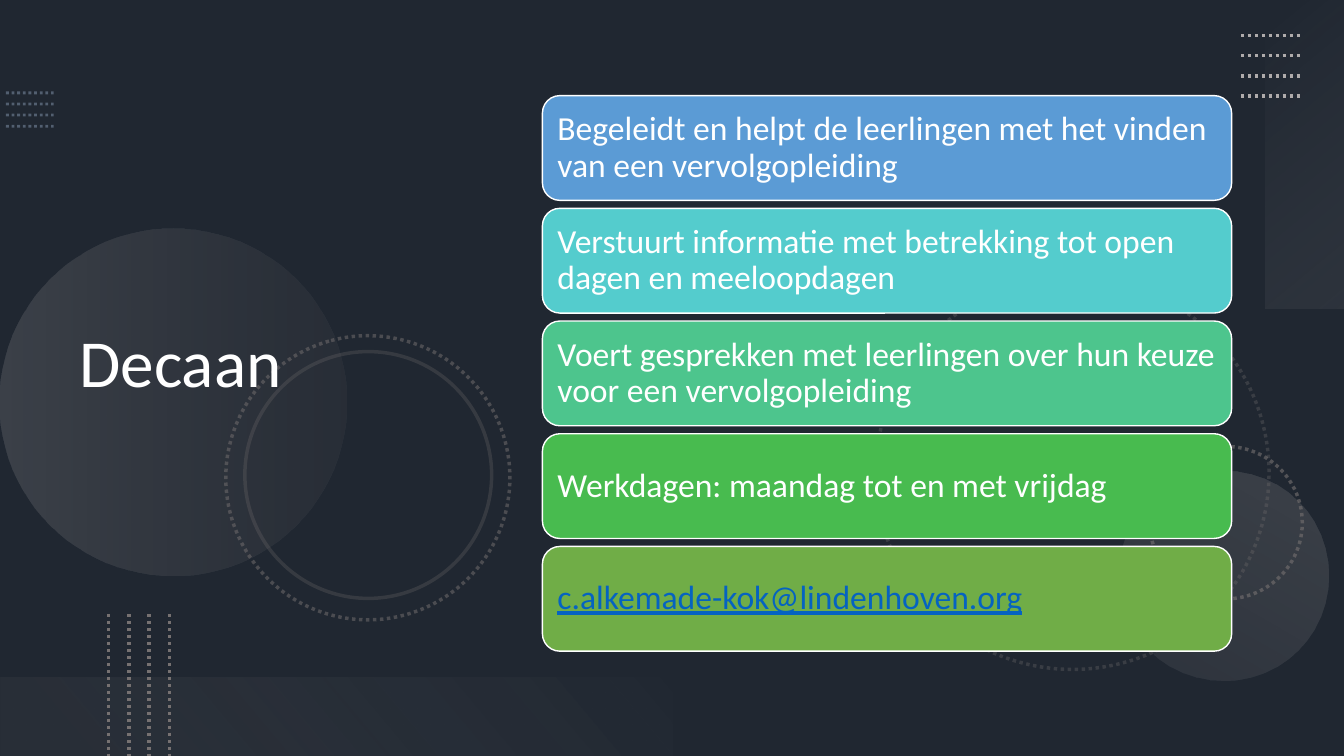
from lxml import etree
from pptx import Presentation
from pptx.dml.color import RGBColor
from pptx.enum import dml, shapes, text
from pptx.oxml.ns import qn
from pptx.util import Cm, Pt

hue = RGBColor.from_string
KIND = shapes.MSO_SHAPE
DOT = dml.MSO_LINE.ROUND_DOT


def add(kind, left, top, width, height, turn=0):
    shape = pool.add_shape(kind, Cm(left), Cm(top), Cm(width), Cm(height))
    shape.rotation = turn
    shape.shadow.inherit = False
    shape.fill.background()
    shape.line.fill.background()
    return shape


def fade(shape, *alphas):
    for tone, alpha in zip(shape._element.iter(qn("a:srgbClr")), alphas):
        etree.SubElement(tone, qn("a:alpha"), val=str(alpha * 1000))


deck = Presentation()
deck.slide_width, deck.slide_height = Cm(33.87), Cm(19.05)
slide = deck.slides.add_slide(deck.slide_layouts[5])
pool = slide.shapes
slide.background.fill.solid()
slide.background.fill.fore_color.rgb = hue("44546A")

shade = add(KIND.RECTANGLE, 0, 0, 33.87, 19.05)
shade.fill.solid()
shade.fill.fore_color.rgb = hue("000000")
fade(shade, 53)

# Gradient discs and bars: kind, box, turn, angle, stops of (place, colour, alpha)
glows = [
    (KIND.OVAL, (0, 5.77, 8.74, 8.74), 270, 90,
     [(0, "AFABAB", 20), (1, "767171", 10)]),
    (KIND.OVAL, (28.19, 11.86, 5.28, 5.28), 210, 90,
     [(0, "AFABAB", 10), (1, "AFABAB", 20)]),
    (KIND.RECTANGLE, (29.01, 2.9, 7.77, 1.98), 270, 140,
     [(0, "F5F5F5", 0), (1, "AFABAB", 10)]),
    (KIND.RECTANGLE, (0, 17.07, 16.94, 1.98), 180, 140,
     [(0.1, "767171", 10), (1, "F1F0F0", 0)]),
]
for kind, box, turn, angle, stops in glows:
    glow = add(kind, *box, turn)
    glow.fill.gradient()
    glow.fill.gradient_angle = 360 - angle
    for stop, (place, tone, alpha) in zip(glow.fill.gradient_stops, stops):
        stop.position = place
        stop.color.rgb = hue(tone)
    fade(glow, *[alpha for place, tone, alpha in stops])

rings = [
    (22.07, 6.96, 9.91, 75, DOT, 30),
    (28.98, 11.25, 3.84, 270, DOT, 60),
    (5.69, 8.46, 7.16, 75, DOT, 50),
    (6.17, 8.86, 6.22, 75, None, 25),
]
for left, top, size, turn, dash, alpha in rings:
    ring = add(KIND.OVAL, left, top, size, size, turn)
    ring.line.color.rgb = hue("767171")
    ring.line.width = Pt(2.5)
    ring.line.dash_style = dash
    fade(ring, alpha)

# Dotted rows: start, end, step, colour, width, alpha
rows = [
    ((0.15, 2.34), (1.35, 2.34), (0, 0.28), "8497B0", 2, 50),
    ((31.27, 0.89), (32.79, 0.89), (0, 0.51), "AFABAB", 2.5, 100),
    ((2.74, 15.47), (2.74, 19.05), (0.51, 0), "767171", 2.5, 100),
]
for (x1, y1), (x2, y2), (dx, dy), tone, width, alpha in rows:
    for i in range(4):
        row = pool.add_connector(
            shapes.MSO_CONNECTOR.STRAIGHT,
            Cm(x1 + i * dx), Cm(y1 + i * dy), Cm(x2 + i * dx), Cm(y2 + i * dy))
        row.line.color.rgb = hue(tone)
        row.line.width = Pt(width)
        row.line.dash_style = DOT
        fade(row, alpha)
        etree.SubElement(row._element.spPr, qn("a:effectLst"))

title = pool.title
pool._spTree.append(title._element)
title.left, title.top, title.width, title.height = Cm(1.75), Cm(1.37), Cm(11.66), Cm(15.67)
title.text = "Decaan"
blocks = [(title, 48)]

tasks = [
    ("Begeleidt en helpt de leerlingen met het vinden van een vervolgopleiding", "5B9BD5"),
    ("Verstuurt informatie met betrekking tot open dagen en meeloopdagen", "54CCCD"),
    ("Voert gesprekken met leerlingen over hun keuze voor een vervolgopleiding", "4DC58D"),
    ("Werkdagen: maandag tot en met vrijdag", "48BB4F"),
    ("c.alkemade-kok@lindenhoven.org", "70AD47"),
]
for i, (words, tone) in enumerate(tasks):
    card = add(KIND.ROUNDED_RECTANGLE, 13.67, 2.41 + 2.84 * i, 17.37, 2.64)
    card.fill.solid()
    card.fill.fore_color.rgb = hue(tone)
    card.line.color.rgb = hue("FFFFFF")
    card.line.width = Pt(1)
    card.text_frame.text = words
    blocks.append((card, 24))

for block, size in blocks:
    frame = block.text_frame
    frame.word_wrap = True
    frame.vertical_anchor = text.MSO_ANCHOR.MIDDLE
    frame.margin_left = frame.margin_right = Cm(0.25)
    para = frame.paragraphs[0]
    para.alignment = text.PP_ALIGN.LEFT
    para.line_spacing = 0.9
    para.font.name = "Calibri"
    para.font.size = Pt(size)
    para.font.color.rgb = hue("FFFFFF")

# The last card holds the mail address
para.font.color.rgb = hue("0563C1")
para.font.underline = True

deck.save("out.pptx")
